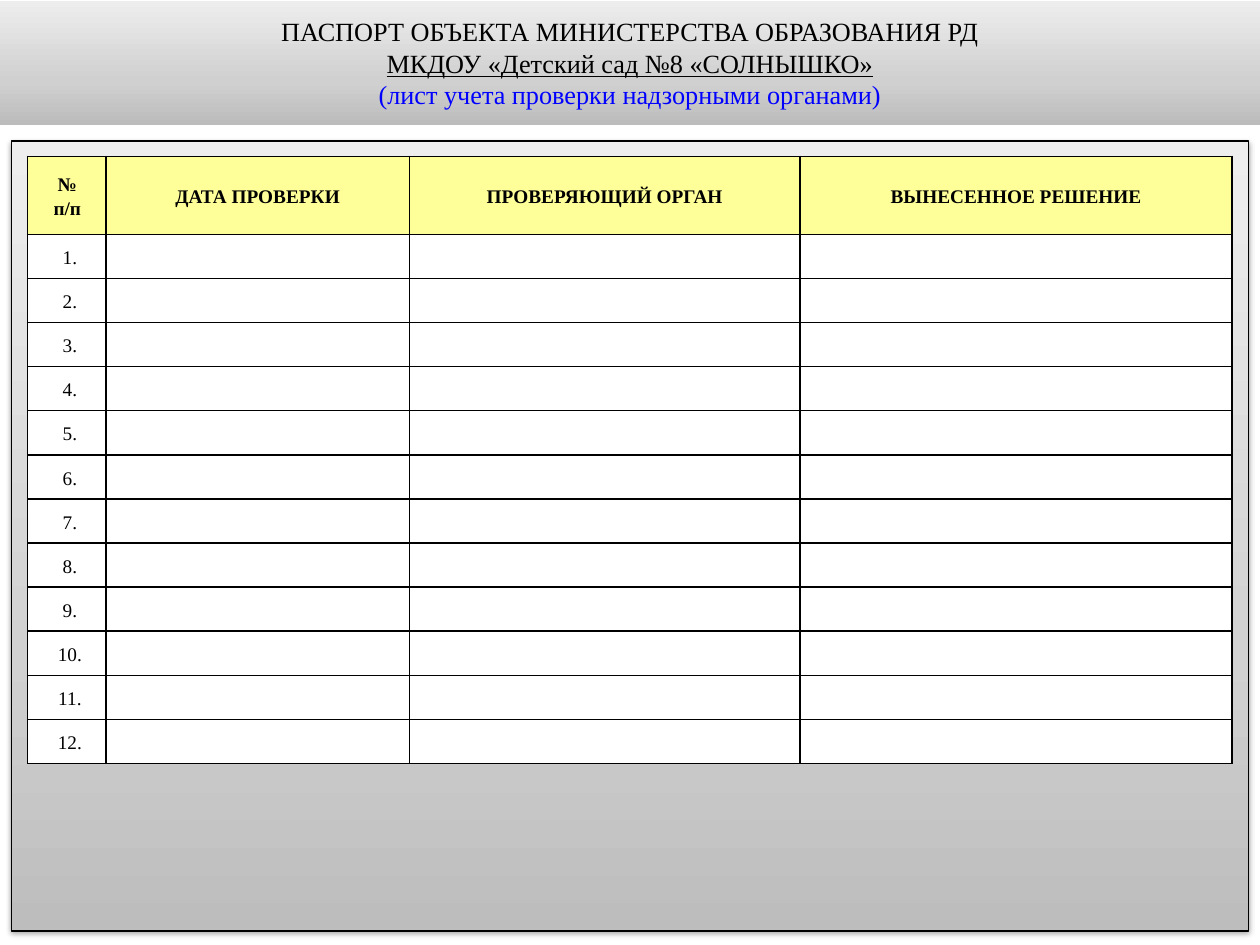
import copy

import lxml.etree
import pptx
import pptx.dml.color
import pptx.enum.shapes
import pptx.enum.text
import pptx.oxml
import pptx.oxml.ns
import pptx.util

Inches, Pt = pptx.util.Inches, pptx.util.Pt
CENTER = pptx.enum.text.PP_ALIGN.CENTER
MIDDLE = pptx.enum.text.MSO_ANCHOR.MIDDLE
FONT = "Times New Roman"
NS = 'xmlns:a="http://schemas.openxmlformats.org/drawingml/2006/main"'


def color(code):
    return pptx.dml.color.RGBColor.from_string(code)


def shade(shape, bottom, middle, top):
    """Fill the shape with a vertical gradient whose middle stop is at 35 %."""
    shape.fill.gradient()
    shape.fill.gradient_angle = 90
    stop_list = shape._element.spPr.find(".//" + pptx.oxml.ns.qn("a:gsLst"))
    stop_list.insert(1, copy.deepcopy(stop_list[0]))
    for stop, place, code in zip(shape.fill.gradient_stops, (0, 0.35, 1), (bottom, middle, top)):
        stop.position = place
        stop.color.rgb = color(code)


deck = pptx.Presentation()
deck.slide_width, deck.slide_height = Inches(10), Inches(7.5)
page = deck.slides.add_slide(deck.slide_layouts[5])

# Title band
title = page.shapes.title
title.left, title.top = Inches(0), Inches(0.01)
title.width, title.height = Inches(10), Inches(0.98)
shade(title, "BCBCBC", "D0D0D0", "EDEDED")
title.text_frame.text = (
    "ПАСПОРТ ОБЪЕКТА МИНИСТЕРСТВА ОБРАЗОВАНИЯ РД\n"
    "МКДОУ «Детский сад №8 «СОЛНЫШКО»\n"
    "(лист учета проверки надзорными органами)"
)
title.text_frame.auto_size = pptx.enum.text.MSO_AUTO_SIZE.NONE
title.text_frame.vertical_anchor = MIDDLE
for para, code in zip(title.text_frame.paragraphs, ("000000", "000000", "0000FF")):
    para.alignment = CENTER
    font = para.runs[0].font
    font.name, font.size, font.color.rgb = FONT, Pt(15), color(code)
title.text_frame.paragraphs[1].runs[0].font.underline = True

# Panel behind the table
panel = page.shapes.add_shape(
    pptx.enum.shapes.MSO_SHAPE.RECTANGLE, Inches(0.09), Inches(1.12), Inches(9.82), Inches(6.27)
)
shade(panel, "BDBDBD", "D1D1D1", "EEEEEE")
panel.line.color.rgb = color("000000")
panel.line.width = Pt(0.75)
panel.shadow.inherit = False
effects = panel._element.spPr.find(pptx.oxml.ns.qn("a:effectLst"))
effects.append(pptx.oxml.parse_xml(
    f'<a:outerShdw {NS} blurRad="{Pt(3.1)}" dist="{Pt(1.6)}" dir="5400000" rotWithShape="0">'
    '<a:srgbClr val="000000"><a:alpha val="38000"/></a:srgbClr></a:outerShdw>'
))

# Inspection table
headings = ["№\nп/п", "ДАТА ПРОВЕРКИ", "ПРОВЕРЯЮЩИЙ ОРГАН", "ВЫНЕСЕННОЕ РЕШЕНИЕ"]
rows = [headings] + [[f"{number}.", "", "", ""] for number in range(1, 13)]
table = page.shapes.add_table(
    len(rows), len(headings), Inches(0.22), Inches(1.24), Inches(9.56), Inches(4.81)
).table
for column, width in zip(table.columns, (0.62, 2.41, 3.1, 3.43)):
    column.width = Inches(width)

for row_index, texts in enumerate(rows):
    is_header = row_index == 0
    table.rows[row_index].height = Inches(0.62 if is_header else 0.35)
    for column_index, text in enumerate(texts):
        cell = table.cell(row_index, column_index)
        cell.text_frame.text = text
        cell.vertical_anchor = MIDDLE
        cell.margin_left = cell.margin_right = Inches(0.03)
        cell.margin_top = cell.margin_bottom = Inches(0)
        for para in cell.text_frame.paragraphs:
            para.alignment = CENTER
            para.line_spacing = Pt(14) if text == "ПРОВЕРЯЮЩИЙ ОРГАН" else 1.15
            if column_index == 0:
                indent = Inches(0.01 if is_header else 0.05)
                para._p.get_or_add_pPr().set("marL", str(indent))
            for span in para.runs:
                font = span.font
                font.name, font.size, font.bold = FONT, Pt(11), is_header
                font.color.rgb = color("000000")
        properties = cell._tc.get_or_add_tcPr()
        for side in ("lnL", "lnR", "lnT", "lnB"):
            properties.append(pptx.oxml.parse_xml(
                f'<a:{side} {NS} w="{Pt(1)}"><a:solidFill><a:srgbClr val="000000"/>'
                f'</a:solidFill></a:{side}>'
            ))
        cell.fill.solid()
        cell.fill.fore_color.rgb = color("FFFF99" if is_header else "FFFFFF")

deck.save("out.pptx")
